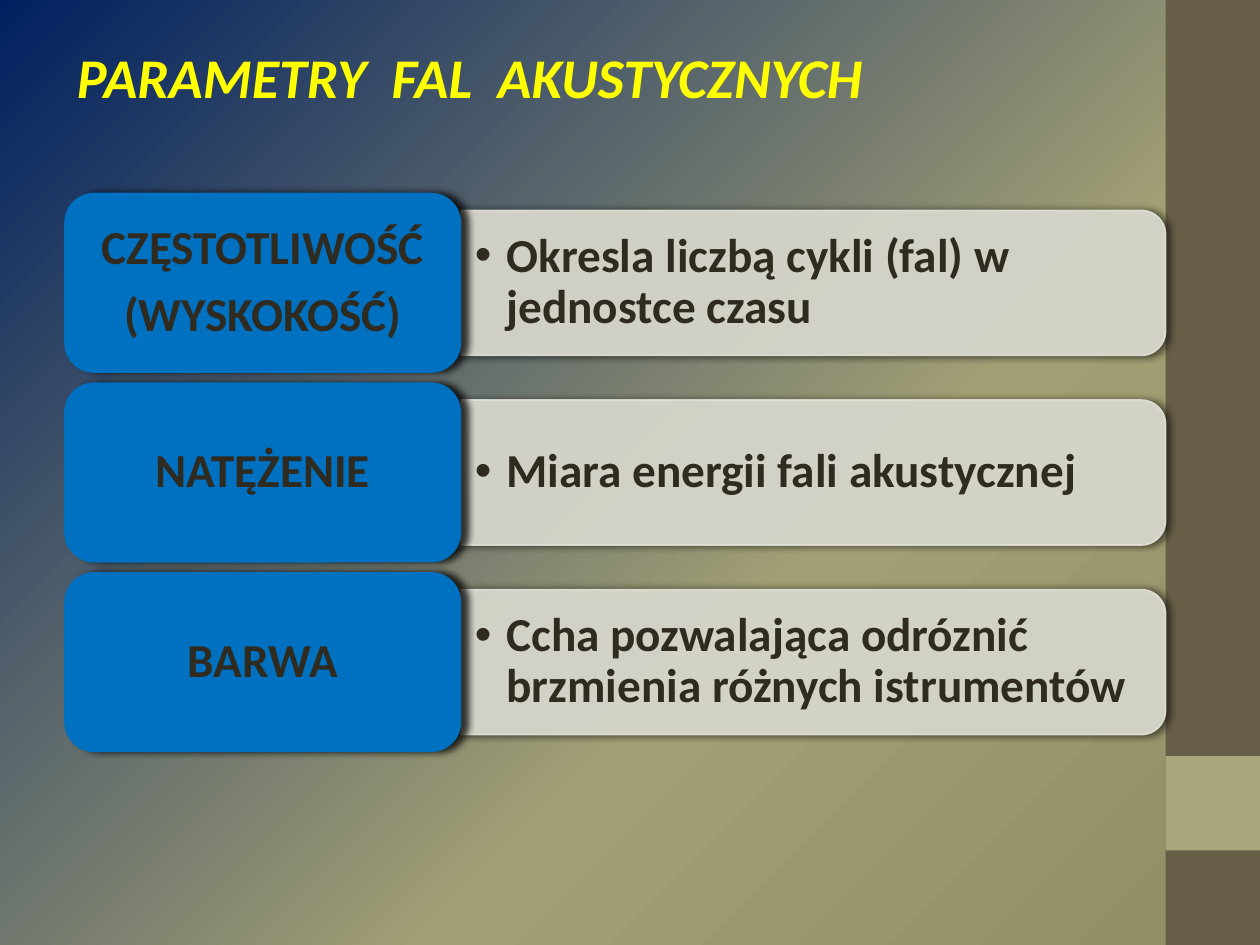
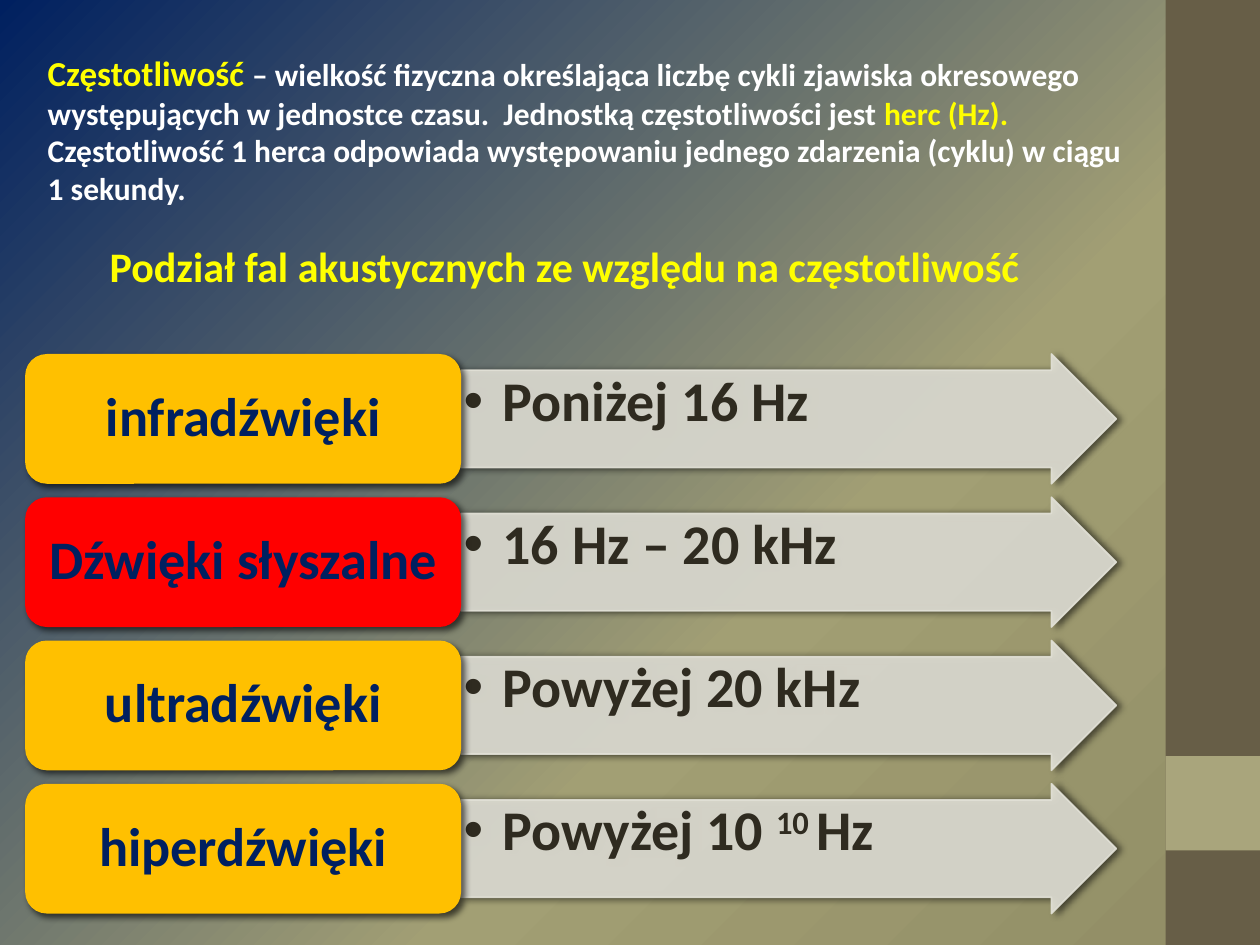
from pptx import Presentation
from pptx.dml.color import RGBColor
from pptx.enum.shapes import MSO_SHAPE as Kind
from pptx.enum.text import MSO_ANCHOR as Anchor, MSO_AUTO_SIZE as Fit, PP_ALIGN as Align
from pptx.oxml import parse_xml
from pptx.oxml.ns import nsdecls, qn
from pptx.util import Inches, Pt

FONT = "Calibri"
NAVY, YELLOW, WHITE, INK = "002060", "FFFF00", "FFFFFF", "2F2B20"
BLUE, AMBER, RED = "0070C0", "FFC000", "FF0000"
PANEL, BAND, BAND_ACCENT = "E2E1D7", "675E47", "A9A57C"
BACKDROP = [(0, NAVY), (62, "A29F74"), (100, "918D65")]
PANEL_SHADOW = (60, 4, 2, 0)
TITLE_ONLY = 5
SPLIT = 3.66

PARAMETERS = [
    (["CZĘSTOTLIWOŚĆ", "(WYSKOKOŚĆ)"], "Okresla liczbą cykli (fal) w jednostce czasu"),
    (["NATĘŻENIE"], "Miara energii fali akustycznej"),
    (["BARWA"], "Ccha pozwalająca odróznić brzmienia różnych istrumentów"),
]
RANGES = [
    ("infradźwięki", AMBER, [("Poniżej 16 Hz", 0)]),
    ("Dźwięki słyszalne", RED, [("16 Hz – 20 kHz", 0)]),
    ("ultradźwięki", AMBER, [("Powyżej 20 kHz", 0)]),
    ("hiperdźwięki", AMBER, [("Powyżej 10 ", 0), ("10 ", 30), ("Hz", 0)]),
]


def color(value):
    return RGBColor.from_string(value)


class Builder:
    """Holds the shared style and the current slide."""

    def __init__(self):
        self.deck = Presentation()
        self.deck.slide_width, self.deck.slide_height = Inches(10), Inches(7.5)
        self.page = None

    def add_page(self):
        self.page = self.deck.slides.add_slide(self.deck.slide_layouts[TITLE_ONLY])

    def style_master(self):
        master = self.deck.slide_master
        fill = master.background.fill
        fill.gradient()
        fill.gradient_angle = 315
        stops = master.element.find(".//" + qn("p:bg")).find(".//" + qn("a:gsLst"))
        for stop in list(stops):
            stops.remove(stop)
        for percent, value in BACKDROP:
            stops.append(parse_xml(
                f'<a:gs {nsdecls("a")} pos="{percent * 1000}"><a:srgbClr val="{value}"/></a:gs>'))
        for top, height, value in [(0, 7.5, BAND), (6, 0.75, BAND_ACCENT)]:
            band = self.shape(Kind.RECTANGLE, 9.25, top, 0.75, height, value)
            master.shapes.element.append(band.element)

    def shape(self, kind, left, top, width, height, fill):
        shape = self.page.shapes.add_shape(
            kind, Inches(left), Inches(top), Inches(width), Inches(height))
        shape.shadow.inherit = False
        shape.fill.solid()
        shape.fill.fore_color.rgb = color(fill)
        shape.line.fill.background()
        return shape

    def cast_shadow(self, shape, opacity, blur, distance, angle):
        shape.element.spPr.find(qn("a:effectLst")).append(parse_xml(
            f'<a:outerShdw {nsdecls("a")} blurRad="{Pt(blur)}" dist="{Pt(distance)}" '
            f'dir="{angle * 60000}" algn="ctr" rotWithShape="0"><a:srgbClr val="000000">'
            f'<a:alpha val="{opacity * 1000}"/></a:srgbClr></a:outerShdw>'))

    def panel(self, kind, left, top, width, height):
        panel = self.shape(kind, left, top, width, height, PANEL)
        panel.line.color.rgb = color(PANEL)
        panel.line.width = Pt(1)
        for tint in panel.element.spPr.iter(qn("a:srgbClr")):
            tint.append(parse_xml(f'<a:alpha {nsdecls("a")} val="90000"/>'))
        self.cast_shadow(panel, *PANEL_SHADOW)
        return panel

    def frame(self, box, anchor, side=0.1, edge=0.05):
        frame = box.text_frame
        frame.word_wrap = True
        frame.vertical_anchor = anchor
        frame.margin_left = frame.margin_right = Inches(side)
        frame.margin_top = frame.margin_bottom = Inches(edge)
        return frame

    def span(self, para, text, size, value, italic=None, raised=0):
        span = para.add_run()
        span.text = text
        font = span.font
        font.name, font.size, font.bold, font.italic = FONT, Pt(size), True, italic
        font.color.rgb = color(value)
        if raised:
            font._element.set("baseline", str(raised * 1000))

    def title(self, text, left, top, width, height, size, italic=None, wrap=True):
        box = self.page.shapes.title
        box.left, box.top = Inches(left), Inches(top)
        box.width, box.height = Inches(width), Inches(height)
        frame = self.frame(box, Anchor.TOP)
        frame.word_wrap = wrap
        frame.auto_size = Fit.SHAPE_TO_FIT_TEXT
        para = frame.paragraphs[0]
        para.alignment = Align.LEFT
        self.span(para, text, size, YELLOW, italic)

    def textbox(self, left, top, width, height):
        return self.page.shapes.add_textbox(
            Inches(left), Inches(top), Inches(width), Inches(height))

    def label(self, lines, left, top, width, height, fill, size, ink, side, shadow):
        box = self.shape(Kind.ROUNDED_RECTANGLE, left, top, width, height, fill)
        self.cast_shadow(box, *shadow)
        frame = self.frame(box, Anchor.MIDDLE, side, 0.06)
        for index, line in enumerate(lines):
            para = frame.add_paragraph() if index else frame.paragraphs[0]
            para.alignment = Align.CENTER
            para.line_spacing = 0.9
            para.space_after = Pt(size * 0.35)
            self.span(para, line, size, ink)

    def bullet(self, frame, spans, size, indent):
        para = frame.paragraphs[0]
        para.level = 1
        para.alignment = Align.LEFT
        para.line_spacing = 0.9
        para.space_after = Pt(size * 0.15)
        for text, raised in spans:
            self.span(para, text, size, INK, raised=raised)
        properties = para._p.get_or_add_pPr()
        properties.set("marL", str(Inches(indent)))
        properties.set("indent", str(-Inches(indent)))
        properties.append(parse_xml(f'<a:buClr {nsdecls("a")}><a:srgbClr val="{INK}"/></a:buClr>'))
        properties.append(parse_xml(f'<a:buFont {nsdecls("a")} typeface="Arial"/>'))
        properties.append(parse_xml(f'<a:buChar {nsdecls("a")} char="•"/>'))


def build_parameters(builder):
    builder.title("PARAMETRY  FAL  AKUSTYCZNYCH", 0.51, 0.29, 7.55, 0.64, 32, True, False)
    left, height, pitch = 0.51, 1.43, 1.505
    length, depth = 5.59, 1.15
    for row, (lines, description) in enumerate(PARAMETERS):
        top = 1.53 + row * pitch
        middle = top + height / 2
        panel = builder.panel(Kind.ROUND_2_SAME_RECTANGLE, SPLIT + (length - depth) / 2,
                              middle - length / 2, depth, length)
        panel.rotation = 90
        box = builder.textbox(SPLIT, top + 0.2, 5.54, 1.03)
        frame = builder.frame(box, Anchor.MIDDLE, 0.11, 0.06)
        builder.bullet(frame, [(description, 0)], 27, 0.25)
        builder.label(lines, left, top, SPLIT - left, height, BLUE, 27, INK, 0.11, (76, 4, 4, 0))


def build_ranges(builder):
    definition = builder.frame(builder.textbox(0.28, 0.36, 8.82, 1.35), Anchor.TOP)
    definition.auto_size = Fit.SHAPE_TO_FIT_TEXT
    for text, size, value in [
        ("Częstotliwość ", 20, YELLOW),
        ("– wielkość fizyczna określająca liczbę cykli zjawiska okresowego występujących "
         "w jednostce czasu.  Jednostką częstotliwości jest ", 18, WHITE),
        ("herc (Hz). ", 18, YELLOW),
        ("Częstotliwość 1 herca odpowiada występowaniu jednego zdarzenia (cyklu) "
         "w ciągu 1 sekundy.", 18, WHITE),
    ]:
        builder.span(definition.paragraphs[0], text, size, value)
    builder.title("Podział fal akustycznych ze względu na częstotliwość",
                  0.77, 1.86, 7.85, 0.5, 24)
    left, height, pitch = 0.2, 1.03, 1.137
    for row, (name, fill, spans) in enumerate(RANGES):
        top = 2.81 + row * pitch
        arrow = builder.panel(Kind.RIGHT_ARROW, SPLIT, top, 5.2, height)
        arrow.adjustments[0], arrow.adjustments[1] = 0.75, 0.5
        builder.bullet(builder.frame(arrow, Anchor.TOP, 0.02, 0.02), spans, 32, 0.31)
        builder.label([name], left, top, SPLIT - left, height, fill, 31, NAVY, 0.13,
                      (61, 4, 3, 45))


def main():
    builder = Builder()
    builder.add_page()
    builder.style_master()
    build_parameters(builder)
    builder.add_page()
    build_ranges(builder)
    builder.deck.save("out.pptx")


if __name__ == "__main__":
    main()
